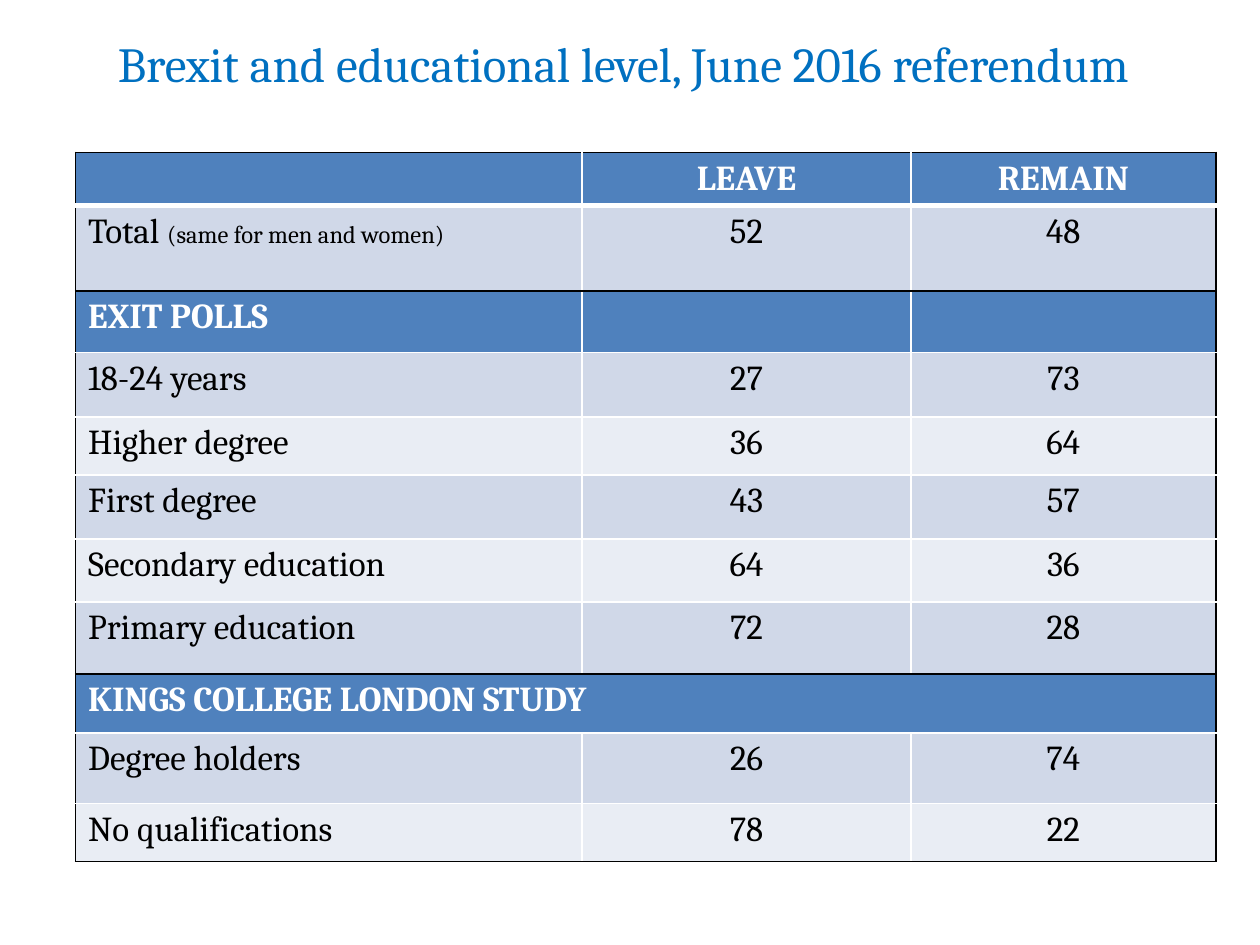
from dataclasses import dataclass

from lxml.etree import SubElement
from pptx import Presentation
from pptx.dml.color import RGBColor
from pptx.enum.text import PP_ALIGN
from pptx.oxml.ns import qn
from pptx.util import Inches, Pt


@dataclass(frozen=True)
class Theme:
    font: str = "Cambria"
    title: str = "0070C0"
    head: str = "4F81BD"
    dark: str = "D0D8E8"
    pale: str = "E9EDF4"
    black: str = "000000"
    white: str = "FFFFFF"
    big: int = 28
    body: int = 20
    small: int = 14


THEME = Theme()
WIDE, HIGH = Inches(10), Inches(7.5)

# Column widths and row heights are percentages of the slide.
COLS = (40.2, 26.1, 24.2)
ROWS = (
    (5.6, "head", ("", "LEAVE", "REMAIN")),
    (9.07, "data", ("Total ", "52", "48")),
    (6.53, "head", ("EXIT POLLS", "", "")),
    (6.8, "data", ("18-24 years", "27", "73")),
    (6.13, "data", ("Higher degree", "36", "64")),
    (6.8, "data", ("First degree", "43", "57")),
    (6.67, "data", ("Secondary education", "64", "36")),
    (7.6, "data", ("Primary education", "72", "28")),
    (6.27, "span", ("KINGS COLLEGE LONDON STUDY", "", "")),
    (7.47, "data", ("Degree holders", "26", "74")),
    (6.13, "data", ("No qualifications", "78", "22")),
)
TOTAL = 1
NOTE = "(same for men and women)"


def across(share):
    return round(WIDE * share / 100)


def down(share):
    return round(HIGH * share / 100)


def write(par, text, *, size=THEME.body, color=THEME.black, bold=False,
          align=PP_ALIGN.LEFT):
    par.alignment = align
    run = par.add_run()
    run.text = text
    font = run.font
    font.name, font.size, font.bold = THEME.font, Pt(size), bold
    font.color.rgb = RGBColor.from_string(color)


def border(cell, edges):
    """Draw the left, right, top and bottom edges, each a colour and a width."""
    props = cell._tc.get_or_add_tcPr()
    for side, (color, width) in zip("LRTB", edges):
        line = SubElement(props, qn(f"a:ln{side}"), w=str(Pt(width)))
        fill = SubElement(line, qn("a:solidFill"))
        SubElement(fill, qn("a:srgbClr"), val=color)


def edges(row, col, span):
    """Black round the table and above each section, white elsewhere."""
    black, white = (THEME.black, 1), (THEME.white, 1)
    kinds = [kind for _, kind, _ in ROWS] + ["head"]
    right = col + span == len(COLS)
    top = row == 0 or kinds[row] != "data"
    if row == 0:
        base = (THEME.white, 3)
    else:
        base = black if kinds[row + 1] != "data" else white
    above = (THEME.white, 3) if row == 1 else white
    return (white if col else black, black if right else white,
            black if top else above, base)


def add_title(slide):
    box = slide.shapes.add_textbox(across(2.4), down(2.93),
                                   across(94.1), down(7.6))
    box.text_frame.word_wrap = True
    write(box.text_frame.paragraphs[0],
          "Brexit and educational level, June 2016 referendum",
          size=THEME.big, color=THEME.title, align=PP_ALIGN.CENTER)


def add_grid(slide):
    frame = slide.shapes.add_table(
        len(ROWS), len(COLS), across(6), down(16.13),
        across(sum(COLS)), down(sum(row[0] for row in ROWS)))
    grid = frame.table
    grid.horz_banding = False
    for col, share in zip(grid.columns, COLS):
        col.width = across(share)

    band = 0
    for r, (share, kind, texts) in enumerate(ROWS):
        grid.rows[r].height = down(share)
        head = kind != "data"
        band = 0 if head else band + 1
        shade = THEME.head if head else (THEME.pale, THEME.dark)[band % 2]
        span = len(COLS) if kind == "span" else 1
        if span > 1:
            grid.cell(r, 0).merge(grid.cell(r, span - 1))
        for c, text in enumerate(texts):
            cell = grid.cell(r, c)
            if cell.is_spanned:
                continue
            border(cell, edges(r, c, span))
            cell.fill.solid()
            cell.fill.fore_color.rgb = RGBColor.from_string(shade)
            if text:
                write(cell.text_frame.paragraphs[0], text, bold=head,
                      color=THEME.white if head else THEME.black,
                      align=PP_ALIGN.CENTER if c else PP_ALIGN.LEFT)
    write(grid.cell(TOTAL, 0).text_frame.paragraphs[0], NOTE,
          size=THEME.small)


def main():
    deck = Presentation()
    deck.slide_width, deck.slide_height = WIDE, HIGH
    slide = deck.slides.add_slide(deck.slide_layouts[6])
    add_grid(slide)
    add_title(slide)
    deck.save("out.pptx")


if __name__ == "__main__":
    main()
